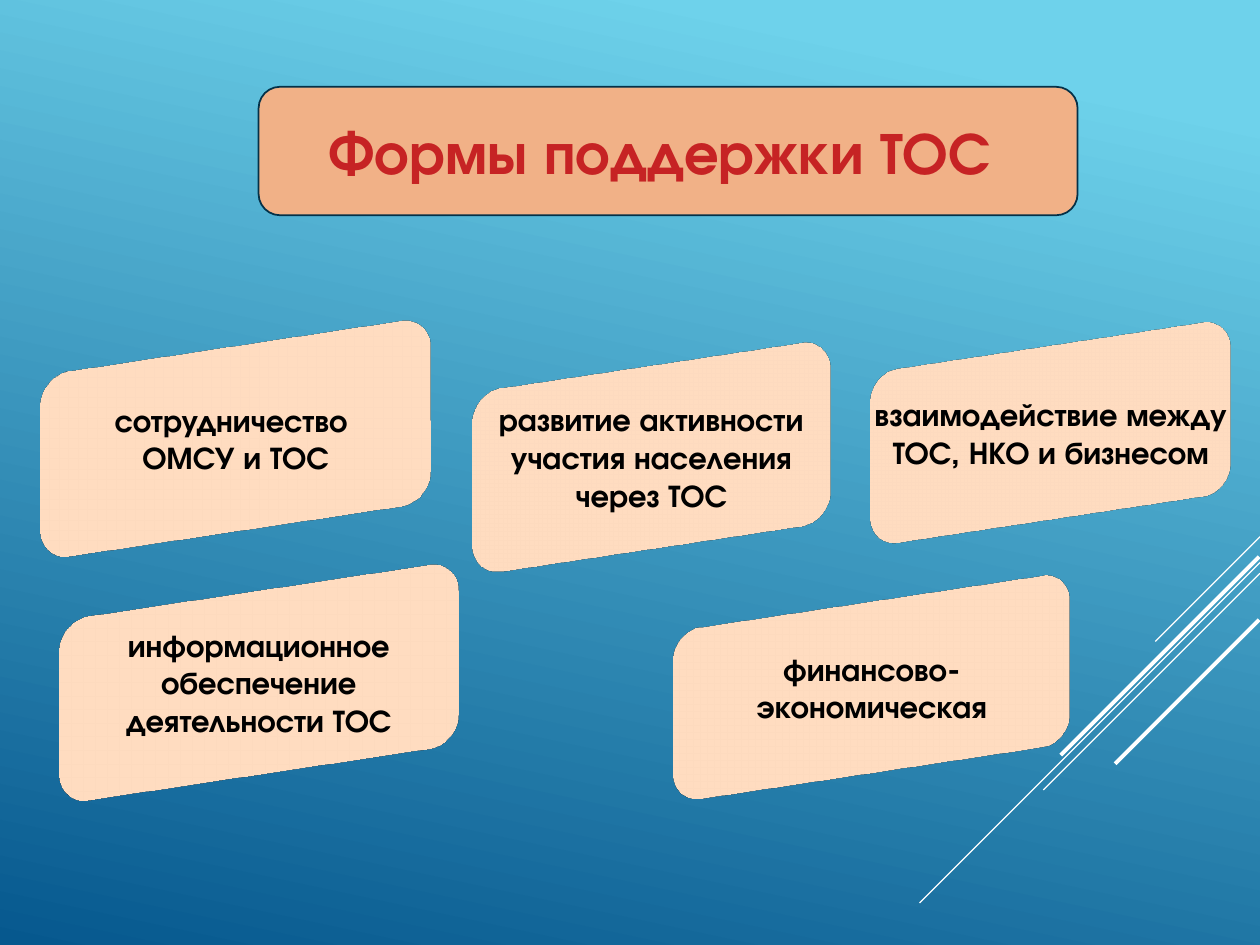
from dataclasses import dataclass

from lxml.etree import SubElement
from pptx import Presentation
from pptx.dml.color import RGBColor
from pptx.enum.shapes import MSO_CONNECTOR as Connector
from pptx.enum.shapes import MSO_SHAPE as Preset
from pptx.enum.text import MSO_ANCHOR as Anchor
from pptx.enum.text import PP_ALIGN as Align
from pptx.oxml.ns import qn
from pptx.shapes.autoshape import Shape
from pptx.slide import Slide
from pptx.util import Pt


@dataclass(frozen=True)
class Theme:
    font: str = "TeX Gyre Adventor"
    sky: str = "6ED2EB"
    deep: str = "06588E"
    title_fill: str = "F1B187"
    title_text: str = "C62324"
    card_fill: str = "F6CBAF"
    card_text: str = "000000"
    outline: str = "043148"
    ray: str = "FFFFFF"
    title_size: float = 33.8
    card_size: float = 18


@dataclass(frozen=True)
class Card:
    left: float
    top: float
    width: float
    height: float
    lines: tuple[str, ...]


@dataclass(frozen=True)
class Ray:
    """A diagonal that runs down and to the left at 45 degrees."""
    right: float
    top: float
    reach: float
    weight: float


THEME = Theme()

RAYS = (
    Ray(720, 306.7, 59.8, 0.75),
    Ray(720, 321.5, 194.5, 0.75),
    Ray(720, 327.6, 123.8, 0.75),
    Ray(719.5, 318.2, 113.3, 2.25),
    Ray(719.5, 354.2, 82.3, 2.25),
)

TITLE = Card(147.8, 49.6, 468, 73.4, ("Формы поддержки ТОС ",))

CARDS = (
    Card(10.8, 195.1, 247.7, 110.9, ("сотрудничество ", "ОМСУ и ТОС")),
    Card(258.5, 205.9, 227.5, 110.2,
         ("развитие активности участия населения через ТОС",)),
    Card(486, 195.1, 229, 104.4,
         ("взаимодействие между ТОС, НКО и бизнесом",)),
    Card(20.9, 334.8, 254.2, 110.2,
         ("информационное обеспечение деятельности ТОС",)),
    Card(372.2, 341.3, 252, 103, ("финансово-экономическая",)),
)


def color(value: str) -> RGBColor:
    return RGBColor.from_string(value)


def paint_background(page: Slide) -> None:
    fill = page.background.fill
    fill.gradient()
    fill.gradient_angle = 258
    for stop, position, value in zip(fill.gradient_stops, (0.1, 1),
                                     (THEME.sky, THEME.deep)):
        stop.position = position
        stop.color.rgb = color(value)


def draw_ray(page: Slide, ray: Ray) -> None:
    line = page.shapes.add_connector(
        Connector.STRAIGHT, Pt(ray.right), Pt(ray.top),
        Pt(ray.right - ray.reach), Pt(ray.top + ray.reach))
    line.line.color.rgb = color(THEME.ray)
    line.line.width = Pt(ray.weight)
    SubElement(line._element.spPr, qn("a:effectLst"))


def draw_card(page: Slide, card: Card, fill: str, size: float,
              ink: str) -> Shape:
    box = page.shapes.add_shape(
        Preset.ROUNDED_RECTANGLE, Pt(card.left), Pt(card.top),
        Pt(card.width), Pt(card.height))
    box.shadow.inherit = False
    box.fill.solid()
    box.fill.fore_color.rgb = color(fill)
    box.line.color.rgb = color(THEME.outline)
    box.line.width = Pt(1)

    frame = box.text_frame
    frame.word_wrap = True
    frame.vertical_anchor = Anchor.MIDDLE
    frame.text = "\n".join(card.lines)
    for para in frame.paragraphs:
        para.alignment = Align.CENTER
        para.font.name = THEME.font
        para.font.size = Pt(size)
        para.font.bold = True
        para.font.color.rgb = color(ink)
    return box


def turn_right(box: Shape) -> None:
    """Turn the shape in space, so that its right side rises."""
    scene = SubElement(box._element.spPr, qn("a:scene3d"))
    SubElement(scene, qn("a:camera"), prst="isometricOffAxis1Right")
    SubElement(scene, qn("a:lightRig"), rig="threePt", dir="t")


def main() -> None:
    deck = Presentation()
    deck.slide_width, deck.slide_height = Pt(720), Pt(540)
    page = deck.slides.add_slide(deck.slide_layouts[6])

    # Backdrop
    paint_background(page)
    for ray in RAYS:
        draw_ray(page, ray)

    # Title and turned cards
    draw_card(page, TITLE, THEME.title_fill, THEME.title_size,
              THEME.title_text)
    for card in CARDS:
        turn_right(draw_card(page, card, THEME.card_fill, THEME.card_size,
                             THEME.card_text))

    deck.save("out.pptx")


if __name__ == "__main__":
    main()
